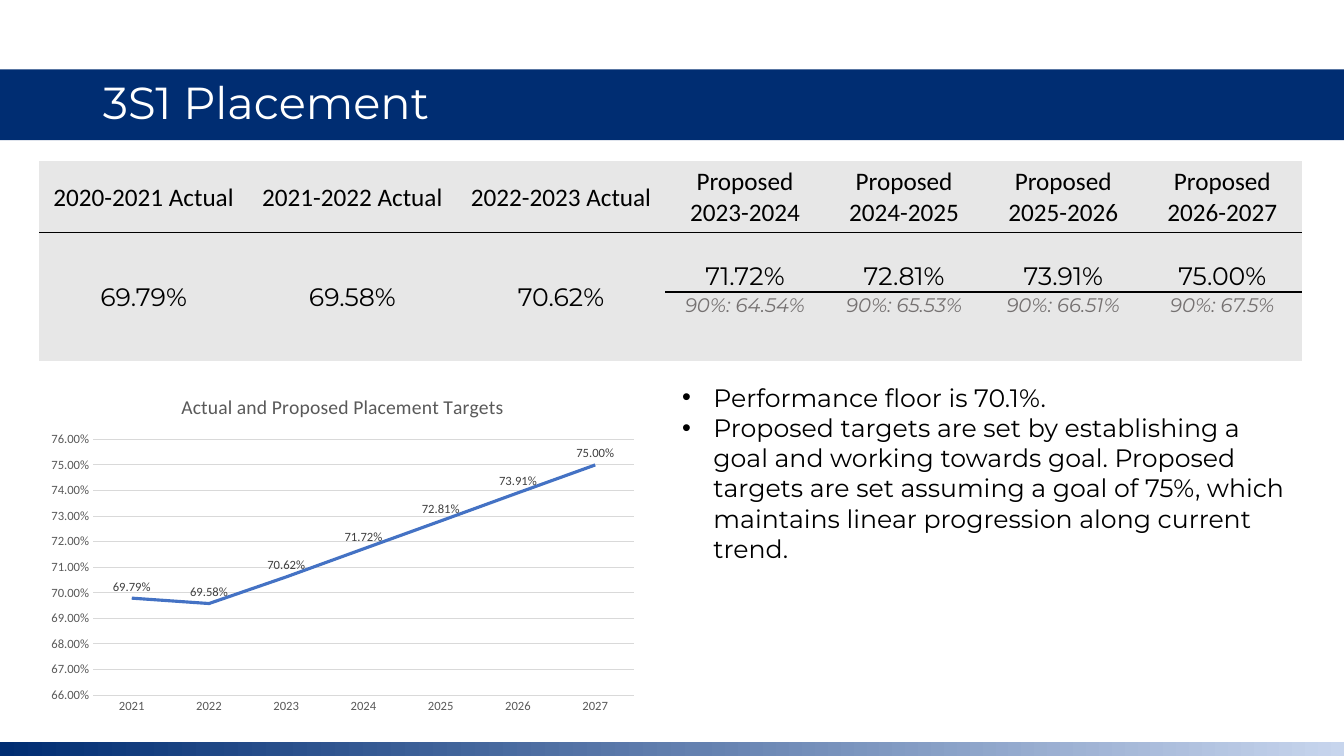
from dataclasses import dataclass

from lxml.etree import SubElement
from pptx import Presentation
from pptx.chart.data import CategoryChartData
from pptx.dml.color import RGBColor
from pptx.enum.chart import XL_CHART_TYPE as ChartType
from pptx.enum.chart import XL_LABEL_POSITION as LabelPosition
from pptx.enum.chart import XL_TICK_MARK as TickMark
from pptx.enum.shapes import MSO_SHAPE as ShapeType
from pptx.enum.text import MSO_ANCHOR as Anchor
from pptx.enum.text import PP_ALIGN as Align
from pptx.oxml import parse_xml
from pptx.oxml.ns import qn
from pptx.util import Cm, Pt

NAVY, WHITE, BLACK = "002D72", "FFFFFF", "000000"
CELL_GREY, NOTE_GREY, GRID_GREY = "E7E7E7", "757171", "D9D9D9"
AXIS_GREY, LABEL_GREY, LINE_BLUE = "595959", "404040", "4472C4"
NAMESPACE = 'xmlns:a="http://schemas.openxmlformats.org/drawingml/2006/main"'
PLAIN_TABLE_STYLE = "{2D5ABB26-0587-4C30-8999-92F81FD0307C}"
HEADING = "Actual and Proposed Placement Targets"


@dataclass
class Box:
    left: float
    top: float
    width: float
    height: float

    def lengths(self) -> list:
        return [Cm(v) for v in (self.left, self.top, self.width, self.height)]


@dataclass
class Target:
    header: str
    value: str
    chart_value: float
    floor: str = ""  # proposed years only


TARGETS = [
    Target("2020-2021 Actual", "69.79%", 0.6979),
    Target("2021-2022 Actual", "69.58%", 0.6958),
    Target("2022-2023 Actual", "70.62%", 0.7062),
    Target("Proposed\v2023-2024", "71.72%", 0.7172, "90%: 64.54%"),
    Target("Proposed\v2024-2025", "72.81%", 0.7281, "90%: 65.53%"),
    Target("Proposed\v2025-2026", "73.91%", 0.7391, "90%: 66.51%"),
    Target("Proposed\v2026-2027", "75.00%", 0.75, "90%: 67.5%"),
]
BULLETS = [
    "Performance floor is 70.1%.",
    "Proposed targets are set by establishing a goal and working towards goal. "
    "Proposed targets are set assuming a goal of 75%, which maintains linear "
    "progression along current trend.",
]


def color(value: str) -> RGBColor:
    return RGBColor.from_string(value)


def set_all(target, **values) -> None:
    for name, value in values.items():
        setattr(target, name, value)


def style_font(font, size: float, value: str, name: str = "Calibri", italic: bool = False) -> None:
    set_all(font, size=Pt(size), name=name, bold=False, italic=italic)
    font.color.rgb = color(value)


def style_line(line, value: str, width: float) -> None:
    line.color.rgb = color(value)
    line.width = Pt(width)


def add_band(slide, box: Box, level: int):
    """Add a full-width band at the given level from the back."""
    band = slide.shapes.add_shape(ShapeType.RECTANGLE, *box.lengths())
    band.shadow.inherit = False
    band.fill.solid()
    band.fill.fore_color.rgb = color(NAVY)
    band.line.fill.background()
    band.element.getparent().insert(2 + level, band.element)
    return band


def add_gradient(shape, stops: list) -> None:
    shape.fill.gradient()
    shape.fill.gradient_angle = 0
    stop_list = shape.element.spPr.find(qn("a:gradFill")).find(qn("a:gsLst"))
    for stop in list(stop_list):
        stop_list.remove(stop)
    for percent, value in stops:
        stop = SubElement(stop_list, qn("a:gs"), pos=str(percent * 1000))
        SubElement(stop, qn("a:srgbClr"), val=value)


def fill_title(slide) -> None:
    title = slide.shapes.title
    box = Box(2.34, 1.75, 29.21, 1.78).lengths()
    set_all(title, **dict(zip(("left", "top", "width", "height"), box)))
    title.text_frame.text = "3S1 Placement"
    title.text_frame.vertical_anchor = Anchor.MIDDLE
    paragraph = title.text_frame.paragraphs[0]
    set_all(paragraph, alignment=Align.LEFT, line_spacing=0.9)
    style_font(paragraph.font, 32, WHITE, "Montserrat")


def add_border(cell, side: str) -> None:
    cell._tc.get_or_add_tcPr().insert(0, parse_xml(
        f'<a:{side} {NAMESPACE} w="12700"><a:solidFill><a:srgbClr val="{BLACK}"/>'
        f'</a:solidFill></a:{side}>'))


def fill_cell(cell, text: str, anchor, size: float = 18, value: str = BLACK,
              name: str = "Montserrat", italic: bool = False) -> None:
    cell.text_frame.text = text
    set_all(cell, vertical_anchor=anchor, margin_left=Cm(0.03), margin_right=Cm(0.03),
            margin_top=Cm(0.03), margin_bottom=0)
    paragraph = cell.text_frame.paragraphs[0]
    paragraph.alignment = Align.CENTER
    for run in paragraph.runs:
        style_font(run.font, size, value, name, italic)


def add_target_table(slide, box: Box) -> None:
    table = slide.shapes.add_table(3, len(TARGETS), *box.lengths()).table
    set_all(table, first_row=False, horz_banding=False)
    table._tbl.tblPr.find(qn("a:tableStyleId")).text = PLAIN_TABLE_STYLE
    for row, height in zip(table.rows, (1.8, 1.5, 1.73)):
        row.height = Cm(height)
    for index, target in enumerate(TARGETS):
        table.columns[index].width = Cm(4.01 if target.floor else 5.26)
        header, value, floor = (table.cell(row, index) for row in range(3))
        for cell in (header, value, floor):
            cell.fill.solid()
            cell.fill.fore_color.rgb = color(CELL_GREY)
        fill_cell(header, target.header, Anchor.MIDDLE, name="Calibri")
        add_border(header, "lnB")
        add_border(value, "lnT")
        if target.floor:
            fill_cell(value, target.value, Anchor.BOTTOM)
            fill_cell(floor, target.floor, Anchor.TOP, 14, NOTE_GREY, italic=True)
        else:
            value.merge(floor)
            fill_cell(value, target.value, Anchor.MIDDLE)


def add_bullets(slide, box: Box) -> None:
    frame = slide.shapes.add_textbox(*box.lengths()).text_frame
    frame.word_wrap = True
    for index, text in enumerate(BULLETS):
        paragraph = frame.add_paragraph() if index else frame.paragraphs[0]
        paragraph.text = text
        properties = paragraph._p.get_or_add_pPr()
        properties.set("marL", str(Cm(0.79)))
        properties.set("indent", str(-Cm(0.79)))
        SubElement(properties, qn("a:buFont"), typeface="Arial")
        SubElement(properties, qn("a:buChar"), char="•")
        style_font(paragraph.runs[0].font, 18, BLACK, "Montserrat")


def add_target_chart(slide, box: Box) -> None:
    data = CategoryChartData(number_format="0.00%")
    data.categories = [str(2021 + index) for index in range(len(TARGETS))]
    data.add_series(HEADING, [target.chart_value for target in TARGETS])
    chart = slide.shapes.add_chart(ChartType.LINE, *box.lengths(), data).chart
    style_font(chart.font, 10, BLACK)
    set_all(chart, has_legend=False, has_title=True)
    chart.chart_title.text_frame.text = HEADING
    style_font(chart.chart_title.text_frame.paragraphs[0].runs[0].font, 14, AXIS_GREY)

    # Axes
    years, rates = chart.category_axis, chart.value_axis
    for axis in (years, rates):
        set_all(axis, major_tick_mark=TickMark.NONE, minor_tick_mark=TickMark.NONE)
        style_font(axis.tick_labels.font, 9, AXIS_GREY)
    style_line(years.format.line, GRID_GREY, 0.75)
    set_all(rates, minimum_scale=0.66, maximum_scale=0.76, major_unit=0.01)
    set_all(rates.tick_labels, number_format="0.00%", number_format_is_linked=False)
    rates.format.line.fill.background()
    style_line(rates.major_gridlines.format.line, GRID_GREY, 0.75)

    # Line and its labels
    plot = chart.plots[0]
    plot.vary_by_categories = False
    series = plot.series[0]
    series.smooth = False
    style_line(series.format.line, LINE_BLUE, 2.25)
    labels = series.data_labels
    set_all(labels, show_value=True, position=LabelPosition.ABOVE,
            number_format="0.00%", number_format_is_linked=False)
    style_font(labels.font, 9, LABEL_GREY)


def main() -> None:
    presentation = Presentation()
    set_all(presentation, slide_width=Cm(33.87), slide_height=Cm(19.05))
    slide = presentation.slides.add_slide(presentation.slide_layouts[5])
    add_band(slide, Box(0, 1.75, 33.87, 1.78), 0)
    footer = add_band(slide, Box(0, 18.69, 33.87, 0.36), 1)
    add_gradient(footer, [(0, NAVY), (52, "6481B0"), (100, "C7D5ED")])
    fill_title(slide)
    add_target_table(slide, Box(0.99, 4.06, 31.82, 5.03))
    add_bullets(slide, Box(16.94, 9.5, 15.7, 4.88))
    add_target_chart(slide, Box(0.99, 9.5, 15.29, 8.66))
    presentation.save("out.pptx")


if __name__ == "__main__":
    main()
